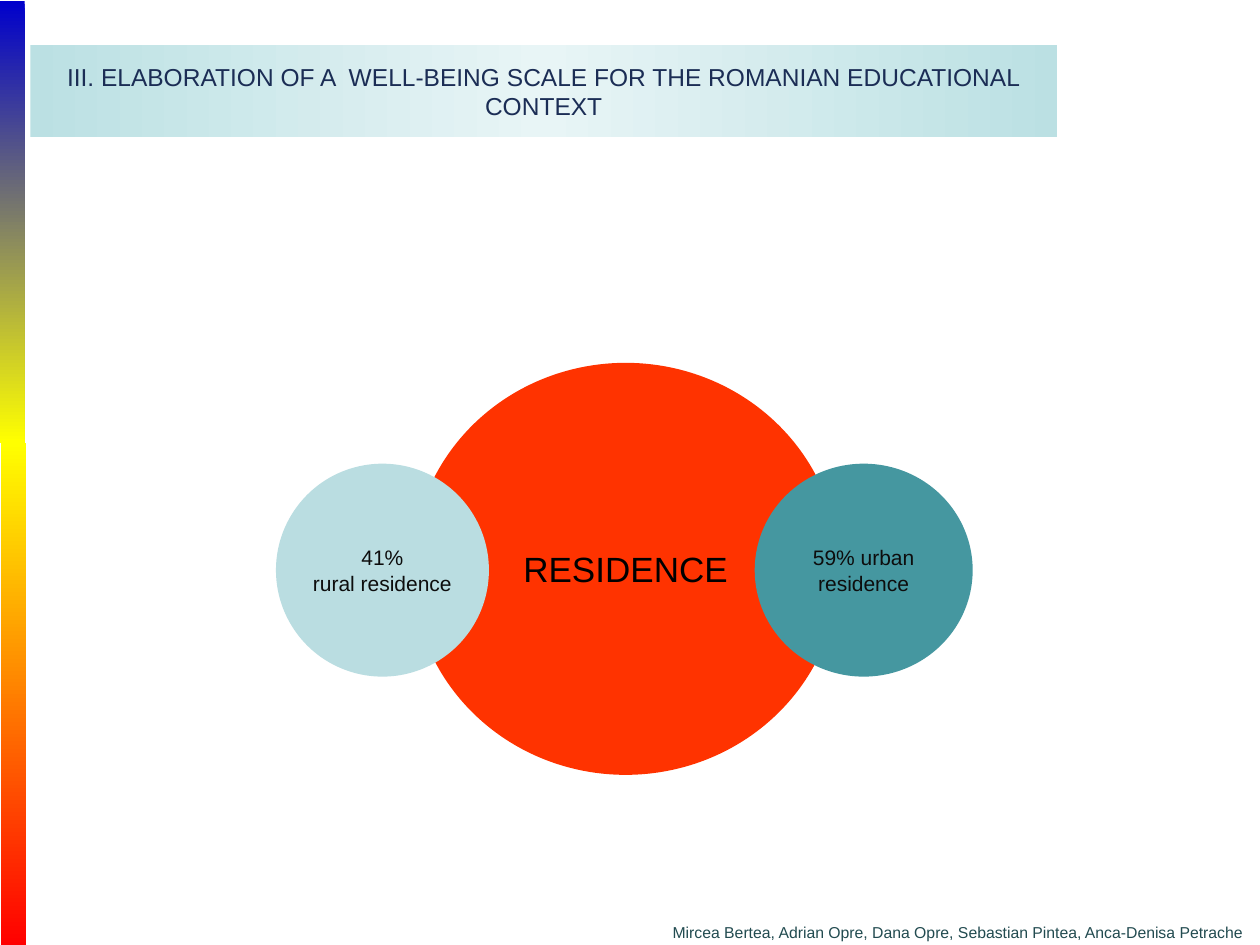
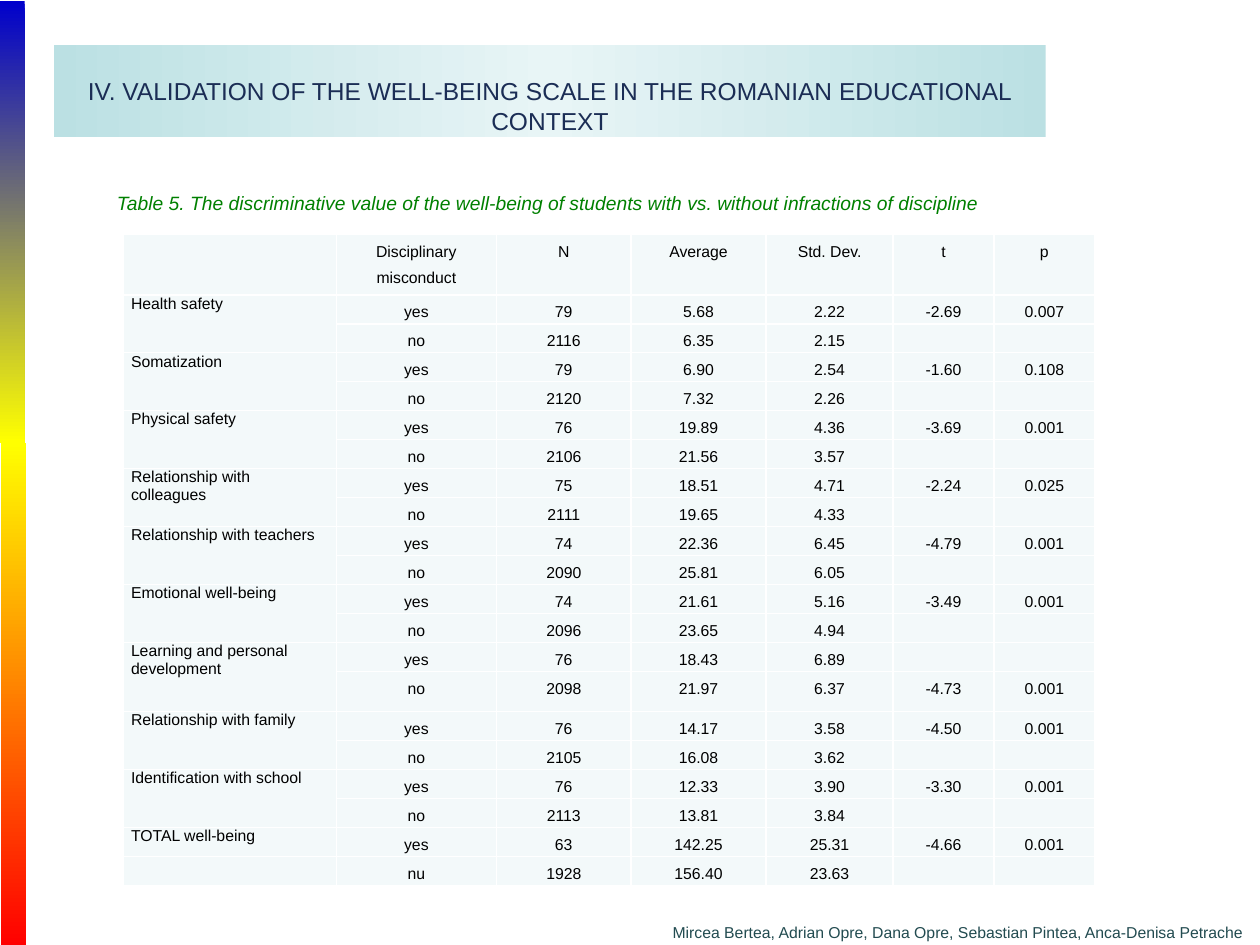
from lxml.etree import SubElement
from pptx import Presentation
from pptx.dml.color import RGBColor
from pptx.enum.shapes import MSO_SHAPE
from pptx.enum.text import MSO_ANCHOR, MSO_AUTO_SIZE, PP_ALIGN
from pptx.oxml.ns import qn
from pptx.util import Inches, Pt

FONT = "Arial"
BLUE = RGBColor(0x00, 0x00, 0xCC)
YELLOW = RGBColor(0xFF, 0xFF, 0x00)
RED = RGBColor(0xFF, 0x00, 0x00)
PALE_TEAL = RGBColor(0xBB, 0xE0, 0xE3)
MIST = RGBColor(0xE8, 0xF5, 0xF6)
NAVY = RGBColor(0x1B, 0x2D, 0x55)
DARK_TEAL = RGBColor(0x22, 0x4B, 0x50)
ORANGE_RED = RGBColor(0xFF, 0x33, 0x00)
RURAL_TEAL = RGBColor(0xBA, 0xDD, 0xE1)
URBAN_TEAL = RGBColor(0x45, 0x97, 0xA0)
CELL_TINT = RGBColor(0xF3, 0xF9, 0xFA)
GREEN = RGBColor(0x00, 0x80, 0x00)
INK = RGBColor(0x0D, 0x0D, 0x0D)
BLACK = RGBColor(0x00, 0x00, 0x00)
WHITE = RGBColor(0xFF, 0xFF, 0xFF)

AUTHORS = "Mircea Bertea, Adrian Opre, Dana Opre, Sebastian Pintea, Anca-Denisa Petrache"
HEADINGS = ["", "Disciplinary\nmisconduct", "N", "Average", "Std. Dev.", "t", "p"]
SCALES = [
    ("Health safety",
     ["yes", "79", "5.68", "2.22", "-2.69", "0.007"], ["no", "2116", "6.35", "2.15", "", ""]),
    ("Somatization",
     ["yes", "79", "6.90", "2.54", "-1.60", "0.108"], ["no", "2120", "7.32", "2.26", "", ""]),
    ("Physical safety",
     ["yes", "76", "19.89", "4.36", "-3.69", "0.001"], ["no", "2106", "21.56", "3.57", "", ""]),
    ("Relationship with colleagues",
     ["yes", "75", "18.51", "4.71", "-2.24", "0.025"], ["no", "2111", "19.65", "4.33", "", ""]),
    ("Relationship with teachers",
     ["yes", "74", "22.36", "6.45", "-4.79", "0.001"], ["no", "2090", "25.81", "6.05", "", ""]),
    ("Emotional well-being",
     ["yes", "74", "21.61", "5.16", "-3.49", "0.001"], ["no", "2096", "23.65", "4.94", "", ""]),
    ("Learning and personal development",
     ["yes", "76", "18.43", "6.89", "", ""], ["no", "2098", "21.97", "6.37", "-4.73", "0.001"]),
    ("Relationship with family",
     ["yes", "76", "14.17", "3.58", "-4.50", "0.001"], ["no", "2105", "16.08", "3.62", "", ""]),
    ("Identification with school",
     ["yes", "76", "12.33", "3.90", "-3.30", "0.001"], ["no", "2113", "13.81", "3.84", "", ""]),
    ("TOTAL well-being",
     ["yes", "63", "142.25", "25.31", "-4.66", "0.001"], ["nu", "1928", "156.40", "23.63", "", ""]),
]
COLUMN_WIDTHS = [1.69, 1.27, 1.07, 1.07, 1.01, 0.8, 0.8]
HEADER_HEIGHT, ROW_HEIGHT, TALL_ROW_HEIGHT = 0.48, 0.23, 0.32
TALL_ROW = 14


def write(frame, text, size, color, align=PP_ALIGN.LEFT, italic=False, spacing=None):
    """Fill a text frame with one paragraph per line of text."""
    for index, line in enumerate(text.split("\n")):
        paragraph = frame.paragraphs[0] if index == 0 else frame.add_paragraph()
        paragraph.alignment = align
        if spacing:
            paragraph.line_spacing = spacing
        run = paragraph.add_run()
        run.text = line
        run.font.name = FONT
        run.font.size = Pt(size)
        run.font.color.rgb = color
        run.font.bold = False
        run.font.italic = italic


def fill_gradient(shape, *colors):
    """Fill a shape with evenly spaced colours from left to right."""
    shape.fill.gradient()
    shape.fill.gradient_angle = 0
    stops = shape.element.spPr.find(".//" + qn("a:gsLst"))
    stops.clear()
    for index, color in enumerate(colors):
        position = str(100000 * index // (len(colors) - 1))
        stop = SubElement(stops, qn("a:gs"), pos=position)
        SubElement(stop, qn("a:srgbClr"), val=str(color))


def add_plain_shape(slide, kind, left, top, width, height):
    """Add a preset shape without line or shadow."""
    shape = slide.shapes.add_shape(
        kind, Inches(left), Inches(top), Inches(width), Inches(height))
    shape.shadow.inherit = False
    shape.line.fill.background()
    return shape


def move_side_band_to_master(slide, master, shape_id, box, colors):
    """Build one half of the rainbow edge and hand it to the slide master."""
    band = add_plain_shape(slide, MSO_SHAPE.RECTANGLE, *box)
    band.rotation = 90
    fill_gradient(band, *colors)
    band.element.nvSpPr.cNvPr.set("id", str(shape_id))
    master.shapes.element.insert(2, band.element)


def add_title(slide, text, left, width, inset_top=0.05):
    """Format the title placeholder as a gradient banner."""
    title = slide.shapes.title
    title.left, title.top = Inches(left), Inches(0.36)
    title.width, title.height = Inches(width), Inches(0.73)
    fill_gradient(title, PALE_TEAL, MIST, PALE_TEAL)
    frame = title.text_frame
    frame.auto_size = MSO_AUTO_SIZE.NONE
    frame.word_wrap = True
    frame.vertical_anchor = MSO_ANCHOR.MIDDLE
    frame.margin_top = Inches(inset_top)
    write(frame, text, 14, NAVY, PP_ALIGN.CENTER)


def add_label(slide, text, box, size, color, **style):
    """Add a wrapping text box."""
    label = slide.shapes.add_textbox(*map(Inches, box))
    label.text_frame.word_wrap = True
    write(label.text_frame, text, size, color, **style)


def add_circle(slide, text, box, fill, size, color, wrap=False):
    """Add a filled ellipse with centred text."""
    circle = add_plain_shape(slide, MSO_SHAPE.OVAL, *box)
    circle.fill.solid()
    circle.fill.fore_color.rgb = fill
    frame = circle.text_frame
    frame.word_wrap = wrap
    frame.vertical_anchor = MSO_ANCHOR.MIDDLE
    if wrap:
        frame.margin_left = frame.margin_right = Inches(0.02)
    write(frame, text, size, color, PP_ALIGN.CENTER)


def format_cell(cell, text, is_label):
    """Set the text, tint, margins and white borders of one cell."""
    cell.margin_left = cell.margin_right = Inches(0.06)
    cell.margin_top = cell.margin_bottom = 0
    cell.fill.solid()
    cell.fill.fore_color.rgb = CELL_TINT
    if text:
        align, spacing = (PP_ALIGN.LEFT, None) if is_label else (PP_ALIGN.CENTER, 1.5)
        write(cell.text_frame, text, 9, BLACK, align, spacing=spacing)
    else:
        blank = cell.text_frame.paragraphs[0]
        SubElement(blank._p, qn("a:endParaRPr"), sz="900")
    properties = cell._tc.get_or_add_tcPr()
    for index, side in enumerate(("a:lnL", "a:lnR", "a:lnT", "a:lnB")):
        border = SubElement(properties, qn(side), w=str(Pt(1)))
        solid = SubElement(border, qn("a:solidFill"))
        SubElement(solid, qn("a:srgbClr"), val=str(WHITE))
        properties.insert(index, border)


def add_scale_table(slide):
    """Add the table that compares students by disciplinary misconduct."""
    rows = [HEADINGS]
    for scale, with_misconduct, without_misconduct in SCALES:
        rows += [[scale, *with_misconduct], ["", *without_misconduct]]
    heights = [HEADER_HEIGHT] + [ROW_HEIGHT] * (len(rows) - 1)
    heights[TALL_ROW] = TALL_ROW_HEIGHT
    table = slide.shapes.add_table(
        len(rows), len(HEADINGS), Inches(0.98), Inches(1.86),
        Inches(sum(COLUMN_WIDTHS)), Inches(sum(heights))).table
    table.first_row = table.horz_banding = False
    for column, width in zip(table.columns, COLUMN_WIDTHS):
        column.width = Inches(width)
    for row_index, (values, height) in enumerate(zip(rows, heights)):
        table.rows[row_index].height = Inches(height)
        for column_index, value in enumerate(values):
            format_cell(table.cell(row_index, column_index), value, column_index == 0)
    for first in range(1, len(rows) - 2, 2):
        table.cell(first, 0).merge(table.cell(first + 1, 0))


def add_authors(slide):
    """Add the footer with the names of the authors."""
    add_label(slide, AUTHORS, (5.24, 7.27, 5, 0.25), 9, DARK_TEAL)


def add_residence_slide(slide):
    """Show the split between rural and urban residence."""
    add_title(slide, "III. ELABORATION OF A  WELL-BEING SCALE FOR THE ROMANIAN "
              "EDUCATIONAL CONTEXT", 0.24, 8.15)
    add_circle(slide, "RESIDENCE", (3.27, 2.88, 3.39, 3.27), ORANGE_RED, 20, BLACK)
    add_authors(slide)
    add_circle(slide, "41%\nrural residence", (2.19, 3.68, 1.69, 1.69), RURAL_TEAL, 12, INK)
    add_circle(slide, "59% urban residence", (5.99, 3.68, 1.73, 1.69), URBAN_TEAL, 12, INK,
               wrap=True)


def add_validation_slide(slide):
    """Show the discriminative value of each scale."""
    add_title(slide, "IV. VALIDATION OF THE WELL-BEING SCALE IN THE ROMANIAN "
              "EDUCATIONAL CONTEXT", 0.43, 7.87, inset_top=0.28)
    add_scale_table(slide)
    add_label(slide, "Table 5. The discriminative value of the well-being of students "
              "with vs. without infractions of discipline", (0.83, 1.47, 7.24, 0.29),
              11, GREEN, align=PP_ALIGN.JUSTIFY, italic=True)
    add_authors(slide)


def main():
    """Build and save the presentation."""
    deck = Presentation()
    deck.slide_width, deck.slide_height = Inches(10), Inches(7.5)
    title_only = deck.slide_layouts[5]
    residence = deck.slides.add_slide(title_only)
    validation = deck.slides.add_slide(title_only)
    move_side_band_to_master(residence, deck.slide_master, 21,
                             (-1.66, 1.66, 3.51, 0.2), (BLUE, YELLOW))
    move_side_band_to_master(residence, deck.slide_master, 22,
                             (-1.89, 5.41, 3.99, 0.2), (YELLOW, RED))
    add_residence_slide(residence)
    add_validation_slide(validation)
    deck.save("out.pptx")


if __name__ == "__main__":
    main()
